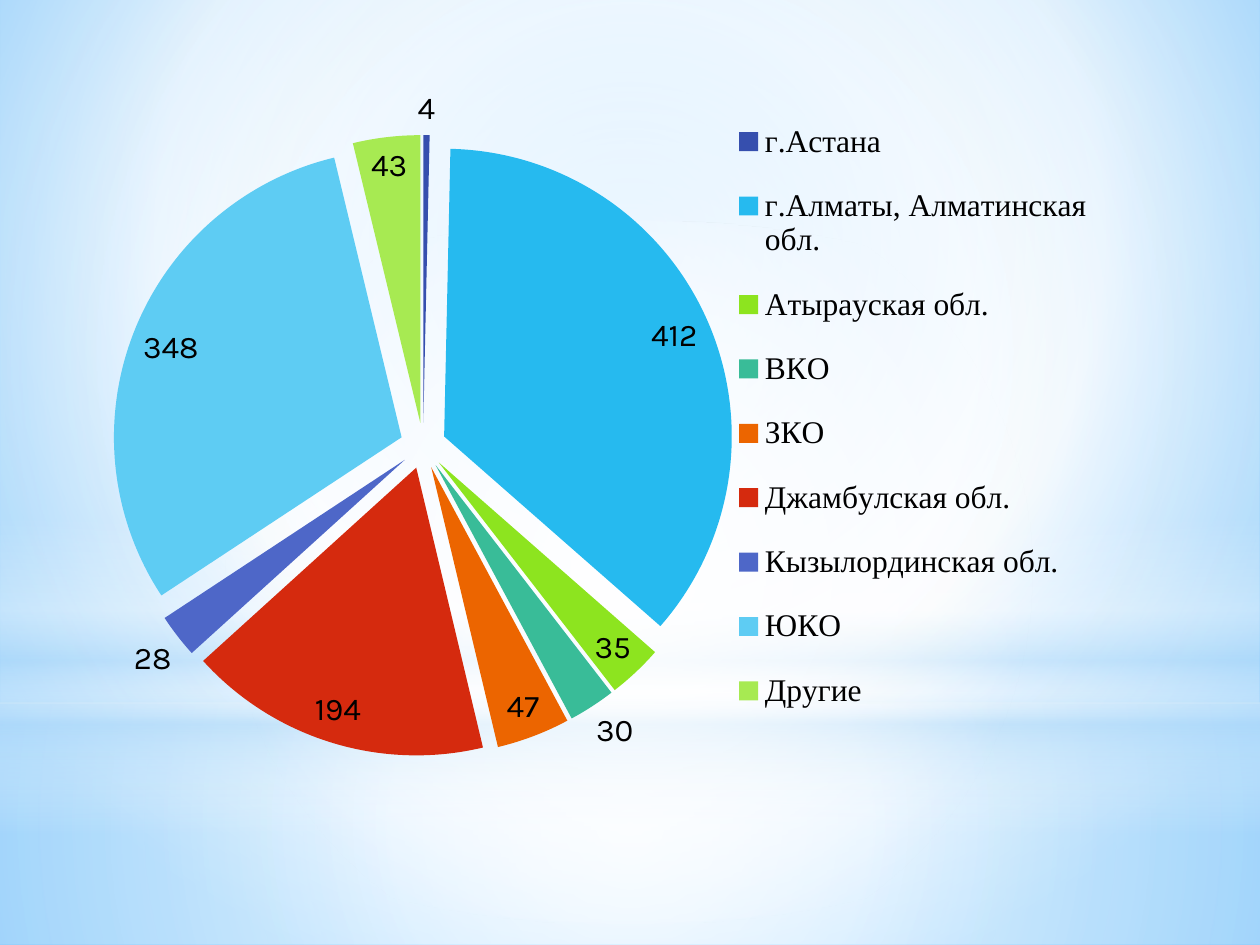
from lxml import etree
from pptx import Presentation
from pptx import util as u
from pptx.chart import data
from pptx.dml.color import RGBColor
from pptx.enum import chart as ch, shapes
from pptx.oxml import parse_xml
from pptx.oxml.ns import nsdecls, qn

SALES = [
    ("г.Астана", 4), ("г.Алматы, Алматинская обл. ", 412),
    ("Атырауская обл.", 35), ("ВКО", 30), ("ЗКО ", 47),
    ("Джамбулская обл.", 194), ("Кызылординская обл.", 28),
    ("ЮКО ", 348), ("Другие ", 43),
]
HUES = ["4E67C8", "5ECCF3", "A7EA52", "5DCEAF", "FF8021", "F14124"]
MID = (50, 50, 50, 50)
RECT = shapes.MSO_SHAPE.RECTANGLE
OVAL = shapes.MSO_SHAPE.OVAL
GLOWS = [
    (RECT, 5.58, 1.92, MID,
     [(0, "FFFFFF", 91), (37, "FFFFFF", 76), (100, "B4DCFA", 79)]),
    (RECT, 0, 5.58, MID,
     [(0, "FFFFFF", 89), (48, "FFFFFF", 62), (100, "B4DCFA", 79)]),
    (RECT, 4.12, 2.5, None,
     [(0, "FFFFFF", 0), (29, "FFFFFF", 30), (45, "B4DCFA", 40),
      (55, "FFFFFF", 26), (65, "B4DCFA", 60), (100, "FFFFFF", 0)]),
    (OVAL, 1.75, 5.58, MID, [(0, "FFFFFF", 100), (56, "FFFFFF", 0)]),
]


def color(code):
    return RGBColor.from_string(code)


def blend(fill, node, stops, focus):
    fill.gradient()
    grad = next(node.iter(qn("a:gradFill")))
    for kid in list(grad):
        grad.remove(kid)
    row = etree.SubElement(grad, qn("a:gsLst"))
    for pos, code, alpha in stops:
        stop = etree.SubElement(row, qn("a:gs"), pos=str(pos * 1000))
        tint = etree.SubElement(stop, qn("a:srgbClr"), val=code)
        etree.SubElement(tint, qn("a:alpha"), val=str(alpha * 1000))
    if focus:
        way = etree.SubElement(grad, qn("a:path"), path="circle")
        sides = {k: str(v * 1000) for k, v in zip("ltrb", focus)}
        etree.SubElement(way, qn("a:fillToRect"), sides)
    else:
        etree.SubElement(grad, qn("a:lin"), ang="5400000", scaled="0")


def add_glow(slide, kind, top, high, focus, stops):
    glow = slide.shapes.add_shape(
        kind, 0, u.Inches(top), u.Inches(10), u.Inches(high))
    glow.shadow.inherit = False
    glow.line.fill.background()
    blend(glow.fill, glow._element.spPr, stops, focus)


def place(node, before, box, inner=False):
    for old in node.findall(qn("c:layout")):
        node.remove(old)
    target = '<c:layoutTarget val="inner"/>' if inner else ""
    modes = "".join(f'<c:{k}Mode val="edge"/>' for k in "xy")
    sizes = "".join(f'<c:{k} val="{v}"/>' for k, v in zip("xywh", box))
    lay = parse_xml(
        f'<c:layout {nsdecls("c")}><c:manualLayout>{target}{modes}{sizes}'
        '</c:manualLayout></c:layout>')
    node.find(qn(before)).addprevious(lay)


def style(font, name):
    font.name = name
    font.size = u.Pt(18)
    font.color.rgb = color("000000")


def add_pie(slide):
    info = data.CategoryChartData()
    info.categories = [name for name, _ in SALES]
    info.add_series("Series 1", [val for _, val in SALES])
    chart = slide.shapes.add_chart(
        ch.XL_CHART_TYPE.PIE, u.Inches(0.39), u.Inches(0.55),
        u.Inches(8.36), u.Inches(6.64), info).chart
    chart.has_title = False
    style(chart.font, "Karla")
    chart.has_legend = True
    key = chart.legend
    key.position = ch.XL_LEGEND_POSITION.RIGHT
    key.include_in_layout = False
    style(key.font, "Times New Roman")
    place(key._element, "c:overlay", (0.64, 0.03, 0.36, 0.77))
    plot = chart.plots[0]
    plot.vary_by_categories = True
    place(chart._chartSpace.chart.plotArea, "c:pieChart",
          (0.06, 0.01, 0.59, 0.88), True)
    pie = plot.series[0]
    for i in range(len(SALES)):
        fill = pie.points[i].format.fill
        fill.solid()
        fill.fore_color.rgb = color(HUES[i % len(HUES)])
        if i < len(HUES):
            fill.fore_color.brightness = -0.18
    burst = parse_xml(f'<c:explosion {nsdecls("c")} val="8"/>')
    pie._element.find(qn("c:dPt")).addprevious(burst)
    tags = pie.data_labels
    tags.show_value = True
    tags.position = ch.XL_LABEL_POSITION.BEST_FIT
    style(tags.font, "Karla")


def main():
    deck = Presentation()
    deck.slide_width = u.Inches(10)
    deck.slide_height = u.Inches(7.5)
    slide = deck.slides.add_slide(deck.slide_layouts[6])
    sky = [(0, "9ED5FF", 100), (60, "FFFFFF", 100), (100, "5BB9FF", 100)]
    blend(slide.background.fill, slide._element, sky, (20, 10, 20, 60))
    for glow in GLOWS:
        add_glow(slide, *glow)
    add_pie(slide)
    deck.save("out.pptx")


if __name__ == "__main__":
    main()
